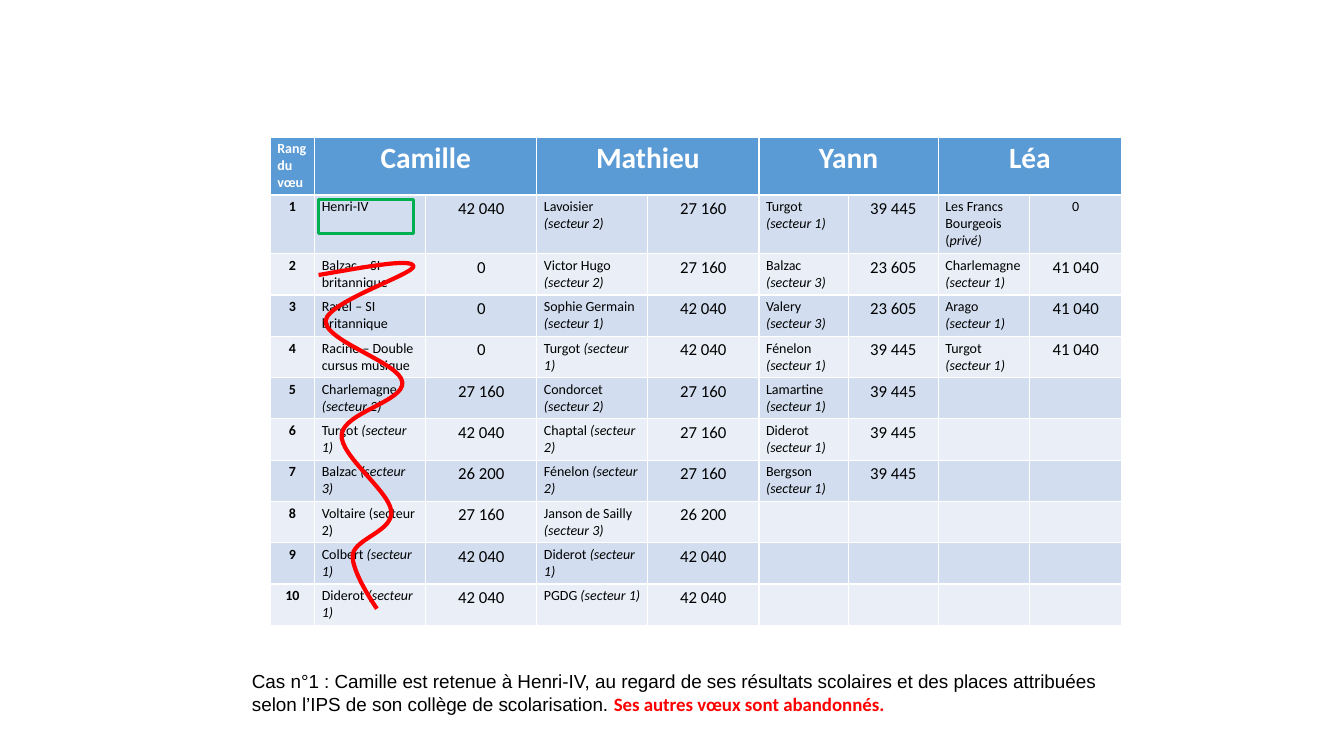
from pptx import Presentation
from pptx.dml.color import RGBColor
from pptx.enum.shapes import MSO_SHAPE
from pptx.enum.text import PP_ALIGN
from pptx.oxml.ns import qn
from pptx.util import Cm, Pt
from lxml.etree import SubElement

WHITE = RGBColor(0xFF, 0xFF, 0xFF)
BLACK = RGBColor(0x00, 0x00, 0x00)
BLUE = RGBColor(0x5B, 0x9B, 0xD5)
DARK = RGBColor(0xD2, 0xDE, 0xEF)
LIGHT = RGBColor(0xEA, 0xEF, 0xF7)
GREEN = RGBColor(0x00, 0xB0, 0x50)
RED = RGBColor(0xFF, 0x00, 0x00)

HEAD = {"name": "Calibri", "size": Pt(21), "bold": True}
RANK = {"name": "Calibri", "size": Pt(10), "bold": True}
WISH = {"name": "Calibri", "size": Pt(10), "bold": False}
SCORE = {"name": "Calibri", "size": Pt(12), "bold": False}
NOTE = WISH | {"italic": True}
PLAIN = {"name": "Arial", "size": Pt(13.5)}
STRONG = {"name": "Calibri", "size": Pt(13.5), "bold": True}

PUPILS = ["Camille", "Mathieu", "Yann", "Léa"]
WIDTHS = [1.12] + [2.8] * 4 + [2.26] * 2 + [2.31] * 2
HEIGHTS = [1.45, 1.48] + [1.04] * 9

WISHES = [
    ["Henri-IV", "42 040", "Lavoisier |(secteur 2)", "27 160",
     "Turgot |(secteur 1)", "39 445", "Les Francs Bourgeois (|privé)", "0"],
    ["Balzac – SI britannique", "0", "Victor Hugo| (secteur 2)", "27 160",
     "Balzac |(secteur 3)", "23 605", "Charlemagne |(secteur 1)", "41 040"],
    ["Ravel – SI britannique", "0", "Sophie Germain |(secteur 1)", "42 040",
     "Valery |(secteur 3)", "23 605", "Arago |(secteur 1)", "41 040"],
    ["Racine – Double cursus musique", "0", "Turgot |(secteur 1)", "42 040",
     "Fénelon |(secteur 1)", "39 445", "Turgot |(secteur 1)", "41 040"],
    ["Charlemagne |(secteur 2)", "27 160", "Condorcet |(secteur 2)", "27 160",
     "Lamartine |(secteur 1)", "39 445"],
    ["Turgot |(secteur 1)", "42 040", "Chaptal |(secteur 2)", "27 160",
     "Diderot |(secteur 1)", "39 445"],
    ["Balzac| (secteur 3)", "26 200", "Fénelon |(secteur 2)", "27 160",
     "Bergson |(secteur 1)", "39 445"],
    ["Voltaire (secteur 2)", "27 160", "Janson de Sailly |(secteur 3)", "26 200"],
    ["Colbert |(secteur 1)", "42 040", "Diderot |(secteur 1)", "42 040"],
    ["Diderot |(secteur 1)", "42 040", "PGDG |(secteur 1)", "42 040"],
]

CURVE = [
    (0, 0.3),
    (1.17, 0.1), (2.36, -0.13), (2.39, 0.08),
    (2.41, 0.28), (0.23, 0.97), (0.18, 1.45),
    (0.13, 1.96), (2.06, 2.51), (2.11, 3),
    (2.18, 3.48), (0.64, 3.76), (0.58, 4.32),
    (0.53, 4.85), (1.78, 5.74), (1.83, 6.25),
    (1.88, 6.76), (0.94, 6.93), (0.86, 7.34),
    (0.81, 7.77), (1.47, 8.71), (1.47, 8.71),
]


def write(par, text, style, color=BLACK):
    """Add a run of text with the given font values."""
    run = par.add_run()
    run.text = text
    for key, value in style.items():
        setattr(run.font, key, value)
    run.font.color.rgb = color


def shade(cell, color):
    """Fill a cell and set its margins."""
    cell.fill.solid()
    cell.fill.fore_color.rgb = color
    margins = {"margin_left": Cm(0.18), "margin_right": Cm(0.18),
               "margin_top": Cm(0.09), "margin_bottom": Cm(0.09)}
    for key, value in margins.items():
        setattr(cell, key, value)


def put(cell, text, style, color=BLACK, align=PP_ALIGN.CENTER):
    """Write a cell, with what follows a bar in italics."""
    par = cell.text_frame.paragraphs[0]
    par.alignment = align
    main, bar, note = text.partition("|")
    write(par, main, style, color)
    if note:
        write(par, note, NOTE, color)


def add_grid(slide, left, top):
    """Build the table of wishes and scores."""
    grid = slide.shapes.add_table(
        len(HEIGHTS), len(WIDTHS), Cm(left), Cm(top),
        Cm(sum(WIDTHS)), Cm(sum(HEIGHTS))).table
    for col, width in zip(grid.columns, WIDTHS):
        col.width = Cm(width)
    for row, height in zip(grid.rows, HEIGHTS):
        row.height = Cm(height)
    for num, row in enumerate(grid.rows):
        for cell in row.cells:
            shade(cell, BLUE if num == 0 else DARK if num % 2 else LIGHT)
    put(grid.cell(0, 0), "Rang du vœu", RANK, WHITE, PP_ALIGN.LEFT)
    for num, name in enumerate(PUPILS):
        cell = grid.cell(0, 2 * num + 1)
        cell.merge(grid.cell(0, 2 * num + 2))
        put(cell, name, HEAD, WHITE)
    for rank, items in enumerate(WISHES, 1):
        put(grid.cell(rank, 0), str(rank), RANK)
        for col, text in enumerate(items, 1):
            if col % 2:
                put(grid.cell(rank, col), text, WISH, align=PP_ALIGN.LEFT)
            else:
                small = (rank, col) == (1, 8)
                put(grid.cell(rank, col), text, WISH if small else SCORE)


def outline(shape, color, width):
    """Leave a shape empty with a coloured line."""
    shape.shadow.inherit = False
    shape.fill.background()
    shape.line.color.rgb = color
    shape.line.width = Pt(width)


def add_frame(slide, left, top, width, height):
    """Frame the wish that is granted."""
    box = slide.shapes.add_shape(
        MSO_SHAPE.RECTANGLE, Cm(left), Cm(top), Cm(width), Cm(height))
    outline(box, GREEN, 2.25)


def add_wave(slide, left, top):
    """Strike out the dropped wishes with a smooth curve."""
    spots = [(Cm(left + x), Cm(top + y)) for x, y in CURVE]
    pen = slide.shapes.build_freeform(*spots[0])
    pen.add_line_segments(spots[1:], close=False)
    wave = pen.convert_to_shape()
    outline(wave, RED, 3)
    steps = list(wave._element.iter(qn("a:lnTo")))
    route = steps[0].getparent()
    for num in range(0, len(steps), 3):
        bend = SubElement(route, qn("a:cubicBezTo"))
        for step in steps[num:num + 3]:
            bend.append(step[0])
            route.remove(step)


def add_note(slide, left, top, width, height):
    """Write the comment under the table."""
    frame = slide.shapes.add_textbox(
        Cm(left), Cm(top), Cm(width), Cm(height)).text_frame
    frame.word_wrap = True
    par = frame.paragraphs[0]
    write(par, "Cas n°1 : Camille est retenue à Henri-IV, au regard de ses "
          "résultats scolaires et des places attribuées selon l’IPS de son "
          "collège de scolarisation. ", PLAIN)
    write(par, "Ses autres vœux sont abandonnés.", STRONG, RED)


def main():
    """Build and save the slide."""
    deck = Presentation()
    deck.slide_width, deck.slide_height = Cm(33.87), Cm(19.05)
    slide = deck.slides.add_slide(deck.slide_layouts[6])
    add_grid(slide, 6.81, 3.45)
    add_frame(slide, 8.03, 5.03, 2.39, 0.86)
    add_wave(slide, 8.03, 6.63)
    add_note(slide, 6.1, 16.76, 22.17, 1.98)
    deck.save("out.pptx")


if __name__ == "__main__":
    main()
